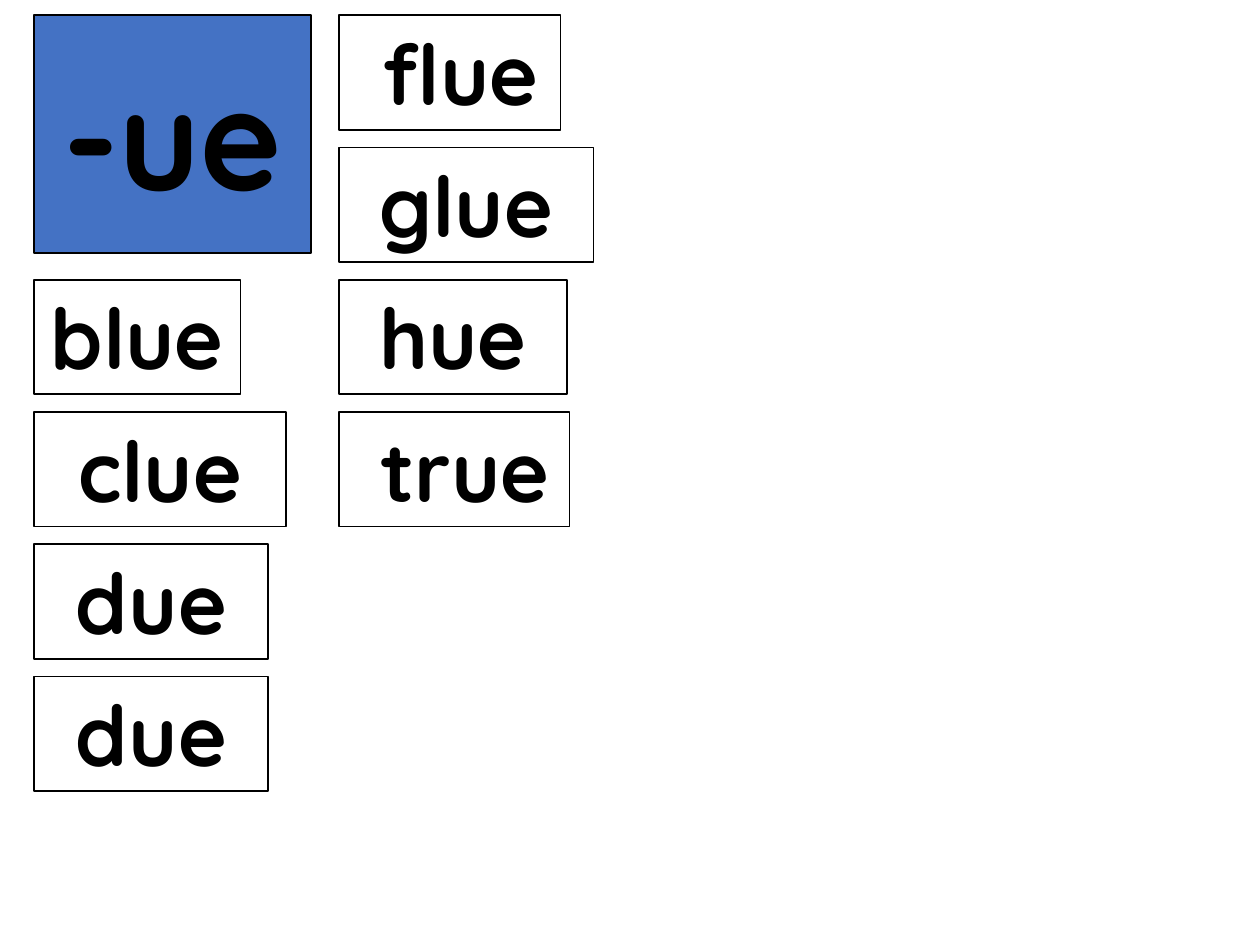
from pptx import Presentation
from pptx.dml.color import RGBColor
from pptx.enum.shapes import MSO_SHAPE as SHAPE
from pptx.enum.text import MSO_ANCHOR as ANCHOR, PP_ALIGN as ALIGN
from pptx.util import Inches, Pt

BLACK = RGBColor(0x00, 0x00, 0x00)
WHITE = RGBColor(0xFF, 0xFF, 0xFF)
BLUE = RGBColor(0x44, 0x72, 0xC4)
FONT = "Quicksand"
LEFT, RIGHT, TOP = 0.27, 2.69, 0.12
ROW, CARD_H = 1.05, 0.91
INSET = 0.1
LEFT_WORDS = [("blue", 1.64, 0), ("clue", 2, 0), ("due", 1.86, 0), ("due", 1.86, 0)]
RIGHT_WORDS = [("flue", 1.76, 0.17), ("glue", 2.02, 0), ("hue", 1.81, 0), ("true", 1.83, 0.17)]


def write(sp, text, size=48, anchor=ANCHOR.TOP, wrap=False, indent=0):
    """Write one centred bold line into a shape."""
    tf = sp.text_frame
    tf.word_wrap = wrap
    tf.vertical_anchor = anchor
    tf.margin_left = Inches(INSET + indent)
    p = tf.paragraphs[0]
    p.alignment = ALIGN.CENTER
    r = p.add_run()
    r.text = text
    r.font.name, r.font.size, r.font.bold = FONT, Pt(size), True
    r.font.color.rgb = BLACK


def add_card(s, box, fill=WHITE):
    """Add a black-edged rectangle in the given box."""
    sp = s.shapes.add_shape(SHAPE.RECTANGLE, *map(Inches, box))
    sp.shadow.inherit = False
    sp.fill.solid()
    sp.fill.fore_color.rgb = fill
    sp.line.color.rgb = BLACK
    sp.line.width = Pt(1)
    return sp


def add_word_column(s, left, top, words):
    """Stack word cards downwards, one per row."""
    for row, (word, width, indent) in enumerate(words):
        sp = add_card(s, (left, top + row * ROW, width, CARD_H))
        write(sp, word, indent=indent)


def add_sound_card(s, box):
    """Add the large card with the shared ending."""
    write(add_card(s, box, BLUE), "-ue", size=80, anchor=ANCHOR.MIDDLE, wrap=True)


def main():
    """Build the word card slide and save it."""
    prs = Presentation()
    prs.slide_width, prs.slide_height = Inches(10), Inches(7.5)
    s = prs.slides.add_slide(prs.slide_layouts[6])
    add_word_column(s, RIGHT, TOP, RIGHT_WORDS)
    add_word_column(s, LEFT, TOP + 2 * ROW, LEFT_WORDS)
    add_sound_card(s, (LEFT, TOP, 2.2, 1.89))
    prs.save("out.pptx")


if __name__ == "__main__":
    main()
